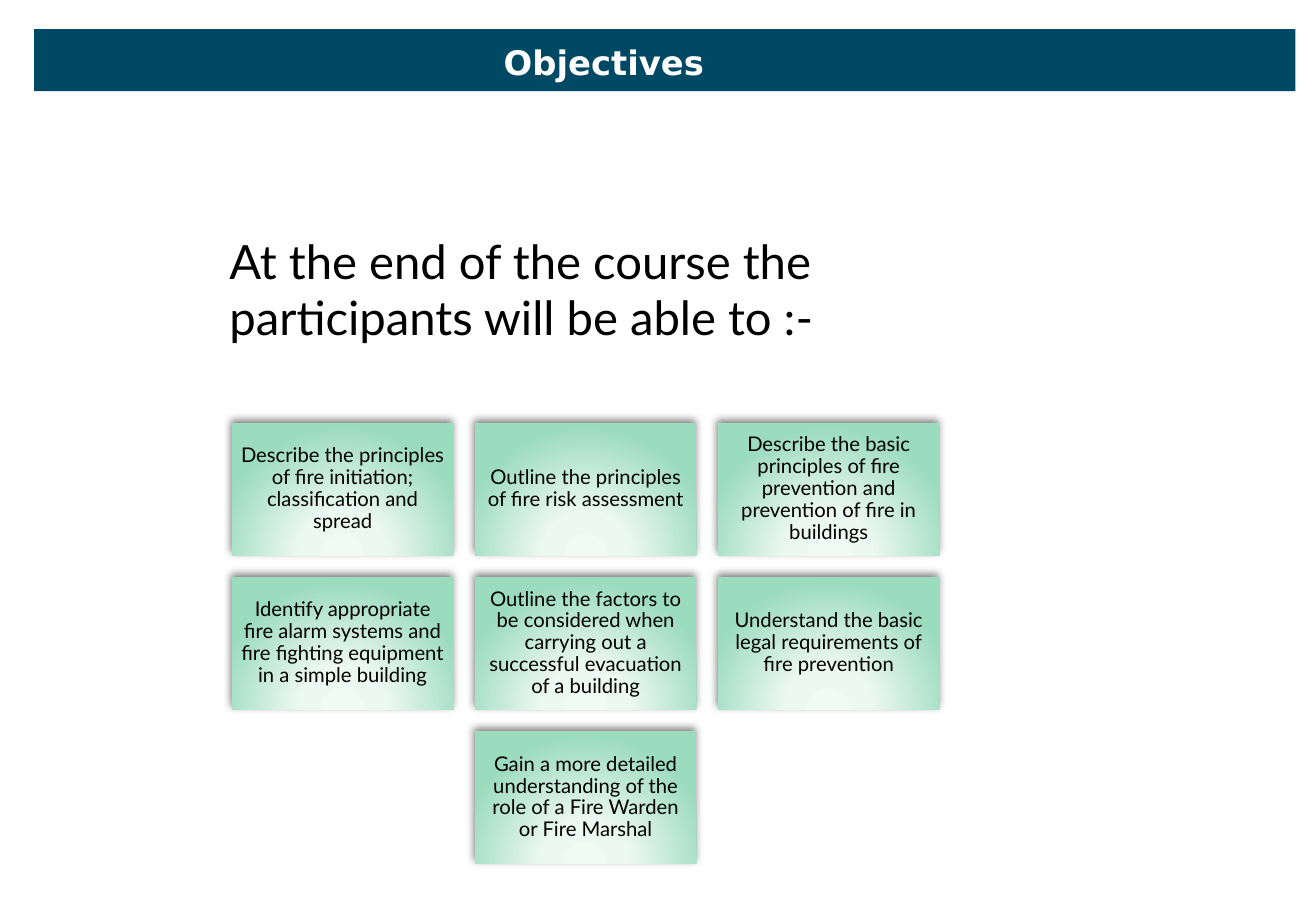
from lxml import etree
from pptx import Presentation
from pptx.dml.color import RGBColor
from pptx.enum import shapes, text
from pptx.util import Inches, Pt

WHITE = RGBColor(0xFF, 0xFF, 0xFF)
BLACK = RGBColor(0x00, 0x00, 0x00)
NAVY = RGBColor(0x00, 0x49, 0x64)
MINT_STOPS = [
    (0, RGBColor(0xF0, 0xFB, 0xF6)),
    (34, RGBColor(0xEC, 0xF8, 0xF2)),
    (100, RGBColor(0x9B, 0xDB, 0xBE)),
]
DRAWING = 'xmlns:a="http://schemas.openxmlformats.org/drawingml/2006/main"'

stops = "".join(
    f'<a:gs pos="{percent * 1000}"><a:srgbClr val="{colour}"/></a:gs>'
    for percent, colour in MINT_STOPS
)
GLOW = (
    f'<a:gradFill {DRAWING} rotWithShape="1"><a:gsLst>{stops}</a:gsLst>'
    '<a:path path="circle"><a:fillToRect l="50000" t="155000" r="50000" b="-55000"/>'
    "</a:path></a:gradFill>"
)
SHADOW = (
    f'<a:effectLst {DRAWING}><a:outerShdw blurRad="{Pt(5)}" dist="{Pt(2)}" '
    f'dir="{245 * 60000}" rotWithShape="0"><a:srgbClr val="{BLACK}">'
    '<a:alpha val="50000"/></a:srgbClr></a:outerShdw></a:effectLst>'
)


def write(shape, words, size, font="Lato", colour=BLACK, bold=False, wrap=True,
          align=text.PP_ALIGN.CENTER, anchor=text.MSO_ANCHOR.TOP,
          inset=None, spacing=None, after=None):
    frame = shape.text_frame
    frame.word_wrap = wrap
    frame.auto_size = text.MSO_AUTO_SIZE.NONE
    frame.vertical_anchor = anchor
    if inset is not None:
        frame.margin_left = frame.margin_right = Inches(inset)
        frame.margin_top = frame.margin_bottom = Inches(inset)
    paragraph = frame.paragraphs[0]
    paragraph.alignment = align
    paragraph.line_spacing = spacing
    paragraph.space_after = after
    run = paragraph.add_run()
    run.text = words
    run.font.name = font
    run.font.size = Pt(size)
    run.font.bold = bold
    run.font.color.rgb = colour


deck = Presentation()
deck.slide_width = Inches(10.83)
deck.slide_height = Inches(7.5)
slide = deck.slides.add_slide(deck.slide_layouts[5])

banner = slide.shapes.add_shape(
    shapes.MSO_SHAPE.RECTANGLE, Inches(0.28), Inches(0.24), Inches(10.38), Inches(0.51)
)
banner.fill.solid()
banner.fill.fore_color.rgb = NAVY
banner.line.fill.background()
banner.shadow.inherit = False

heading = slide.shapes.title
heading.left, heading.top = Inches(4.04), Inches(0.29)
heading.width, heading.height = Inches(1.86), Inches(0.44)
write(heading, "Objectives", 20, font="DejaVu Sans", colour=WHITE, bold=True, wrap=False)
heading.element.addprevious(banner.element)

introduction = slide.shapes.add_textbox(Inches(1.79), Inches(1.86), Inches(6.96), Inches(1.04))
write(introduction, "At the end of the course the participants will be able to :-", 28,
      align=text.PP_ALIGN.LEFT)

objectives = [
    [
        "Describe the principles of fire initiation; classification and spread",
        "Outline the principles of fire risk assessment",
        "Describe the basic principles of fire prevention and prevention of fire in buildings",
    ],
    [
        "Identify appropriate fire alarm systems and fire fighting equipment in a simple building",
        "Outline the factors to be considered when carrying out a successful evacuation of a building",
        "Understand the basic legal requirements of fire prevention",
    ],
    ["Gain a more detailed understanding of the role of a Fire Warden or Fire Marshal"],
]
for row, goals in enumerate(objectives):
    indent = (3 - len(goals)) / 2
    for column, goal in enumerate(goals):
        card = slide.shapes.add_shape(
            shapes.MSO_SHAPE.RECTANGLE,
            Inches(1.91 + 2 * (column + indent)), Inches(3.48 + 1.27 * row),
            Inches(1.82), Inches(1.09),
        )
        card.line.fill.background()
        properties = card.element.spPr
        properties.prstGeom.addnext(etree.fromstring(GLOW))
        properties.append(etree.fromstring(SHADOW))
        write(card, goal, 12, anchor=text.MSO_ANCHOR.MIDDLE, inset=0.05,
              spacing=0.9, after=Pt(4.2))

deck.save("out.pptx")
